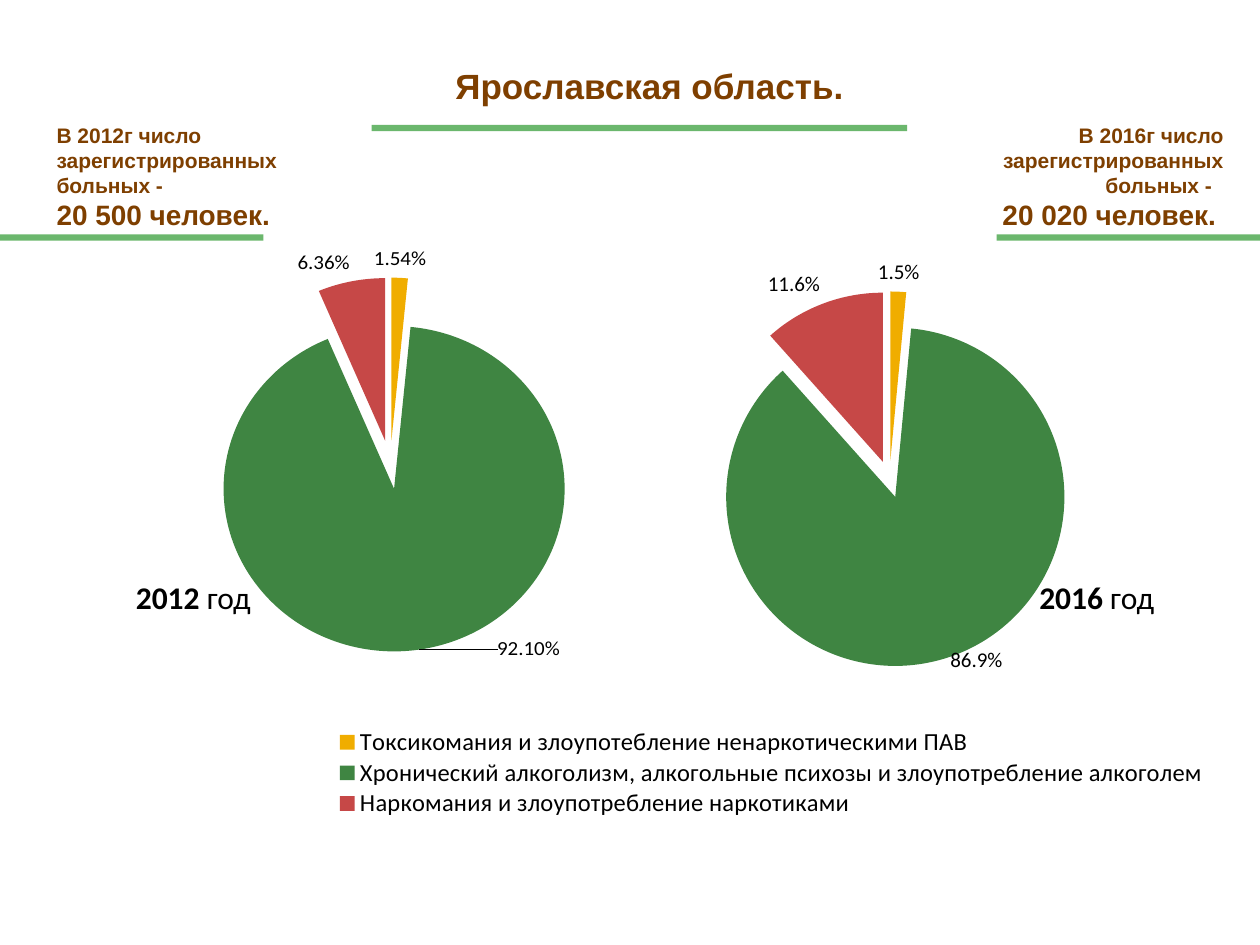
"""Build a slide comparing two pie charts of registered patients."""
from lxml import etree
from pptx import Presentation
from pptx import util as u
from pptx.chart.data import CategoryChartData
from pptx.dml.color import RGBColor
from pptx.enum import chart as charts, shapes, text
from pptx.oxml import ns

BROWN = RGBColor(0x7E, 0x3F, 0x00)
BLACK = RGBColor(0, 0, 0)
LINE_GREEN = RGBColor(0x6B, 0xB7, 0x6D)
SLICES = [RGBColor(0xF0, 0xAD, 0x00), RGBColor(0x3F, 0x85, 0x42), RGBColor(0xC6, 0x48, 0x47)]
DIAGNOSES = [
    "Токсикомания и злоупотебление ненаркотическими ПАВ",
    "Хронический алкоголизм, алкогольные психозы и злоупотребление алкоголем",
    "Наркомания и злоупотребление наркотиками",
]


def set_font(font, name, size, color, bold=None):
    """Set the face, size, colour and weight of a font."""
    font.name, font.size, font.bold = name, u.Pt(size), bold
    font.color.rgb = color


def inches(*lengths):
    """Turn numbers into inch lengths."""
    return [u.Inches(length) for length in lengths]


def manual_layout(**settings):
    """Return a chart layout element with the given settings."""
    layout = etree.Element(ns.qn("c:layout"))
    manual = etree.SubElement(layout, ns.qn("c:manualLayout"))
    for name, value in settings.items():
        etree.SubElement(manual, ns.qn("c:" + name)).set("val", str(value))
    return layout


def place_part(part, index, area, **settings):
    """Give a chart part a fixed area, as shares of the chart."""
    for old_layout in part.findall(ns.qn("c:layout")):
        part.remove(old_layout)
    left, top, width, height = area
    part.insert(index, manual_layout(**settings, xMode="edge", yMode="edge",
                                     x=left, y=top, w=width, h=height))


def add_title(slide, wording):
    """Place and format the title."""
    title = slide.shapes.title
    title.left, title.top, title.width, title.height = inches(2.4, 0.28, 5.51, 0.79)
    frame = title.text_frame
    frame.text = wording
    frame.vertical_anchor = text.MSO_ANCHOR.MIDDLE
    paragraph = frame.paragraphs[0]
    paragraph.alignment = text.PP_ALIGN.CENTER
    set_font(paragraph.font, "Arial", 20, BROWN, True)


def add_pie(slide, place, plot_area, categories, values, number_format, explosion, label_shift):
    """Add an exploded pie with value labels and return its chart."""
    data = CategoryChartData(number_format=number_format)
    data.categories = categories
    data.add_series("Series 1", values)
    chart = slide.shapes.add_chart(charts.XL_CHART_TYPE.PIE, *inches(*place), data).chart
    chart.has_title = chart.has_legend = False
    set_font(chart.font, "Calibri", 18, BLACK)
    plot = chart.plots[0]
    plot.vary_by_categories = True
    series = plot.series[0]
    for index, color in enumerate(SLICES):
        fill = series.points[index].format.fill
        fill.solid()
        fill.fore_color.rgb = color

    element = series._element
    burst = etree.Element(ns.qn("c:explosion"))
    burst.set("val", str(explosion))
    element.find(ns.qn("c:dPt")).addprevious(burst)

    labels = series.data_labels
    labels.show_value = True
    labels.number_format, labels.number_format_is_linked = number_format, False
    moved_label = series.points[1].data_label
    for label in (labels, moved_label):
        label.position = charts.XL_LABEL_POSITION.OUTSIDE_END
        set_font(label.font, "Calibri", 12, BLACK)
    label_index = element.find(".//" + ns.qn("c:dLbl") + "/" + ns.qn("c:idx"))
    label_index.addnext(etree.Element(ns.qn("c:numFmt"), formatCode=number_format, sourceLinked="0"))
    label_index.addnext(manual_layout(x=label_shift[0], y=label_shift[1]))

    area = chart._chartSpace.find(".//" + ns.qn("c:plotArea"))
    place_part(area, 0, plot_area, layoutTarget="inner")
    return chart


def add_legend(chart):
    """Show the legend below the pie, one entry a row."""
    chart.has_legend = True
    legend = chart.legend
    legend.position = charts.XL_LEGEND_POSITION.BOTTOM
    legend.include_in_layout = False
    set_font(legend.font, "Calibri", 14, BLACK)
    place_part(legend._element, 1, (0, 0.84, 1, 0.16))


def add_year(slide, left, year):
    """Add a year caption beside a pie."""
    frame = slide.shapes.add_textbox(*inches(left, 4.54, 1.12, 0.4)).text_frame
    frame.word_wrap = False
    paragraph = frame.paragraphs[0]
    set_font(paragraph.font, "Calibri", 18, BLACK)
    for wording, bold in ((year, True), (" год", False)):
        run = paragraph.add_run()
        run.text, run.font.bold = wording, bold


def add_count(slide, left, width, lines, alignment):
    """Add the number of registered patients."""
    frame = slide.shapes.add_textbox(*inches(left, 0.92, width, 0.98)).text_frame
    frame.word_wrap = True
    frame.text = "\n".join(lines)
    for paragraph, size in zip(frame.paragraphs, (12, 16)):
        paragraph.alignment = alignment
        set_font(paragraph.font, "Arial", size, BROWN, True)


def add_bar(slide, left, top, width):
    """Add a thin green bar."""
    bar = slide.shapes.add_shape(shapes.MSO_SHAPE.RECTANGLE, *inches(left, top, width, 0.05))
    bar.shadow.inherit = False
    bar.fill.solid()
    bar.fill.fore_color.rgb = LINE_GREEN
    bar.line.fill.background()


def main():
    """Build and save the slide."""
    presentation = Presentation()
    presentation.slide_width, presentation.slide_height = inches(10, 7.5)
    slide = presentation.slides.add_slide(presentation.slide_layouts[5])
    add_title(slide, "Ярославская область.")
    chart_2016 = add_pie(slide, (2.66, 1.93, 6.93, 4.57), (0.42, 0.08, 0.43, 0.66), DIAGNOSES,
                         (0.015, 0.869, 0.116), "0.0%", 11, (0, -0.03))
    add_legend(chart_2016)
    add_pie(slide, (0.61, 1.94, 4.65, 3.46), (0.19, 0.08, 0.69, 0.9), ["1", "2", "3"],
            (0.0154, 0.921, 0.0636), "0.00%", 15, (0.13, -0.03))
    add_year(slide, 0.98, "2012")
    add_year(slide, 8.15, "2016")
    add_count(slide, 0.35, 2.05, ("В 2012г число зарегистрированных больных -", "20 500 человек."),
              text.PP_ALIGN.LEFT)
    add_count(slide, 7.83, 1.98, ("В 2016г число зарегистрированных больных -  ", "20 020 человек. "),
              text.PP_ALIGN.RIGHT)
    for left, top, width in ((2.95, 0.99, 4.25), (7.91, 1.86, 2.09), (0, 1.86, 2.09)):
        add_bar(slide, left, top, width)
    presentation.save("out.pptx")


if __name__ == "__main__":
    main()
